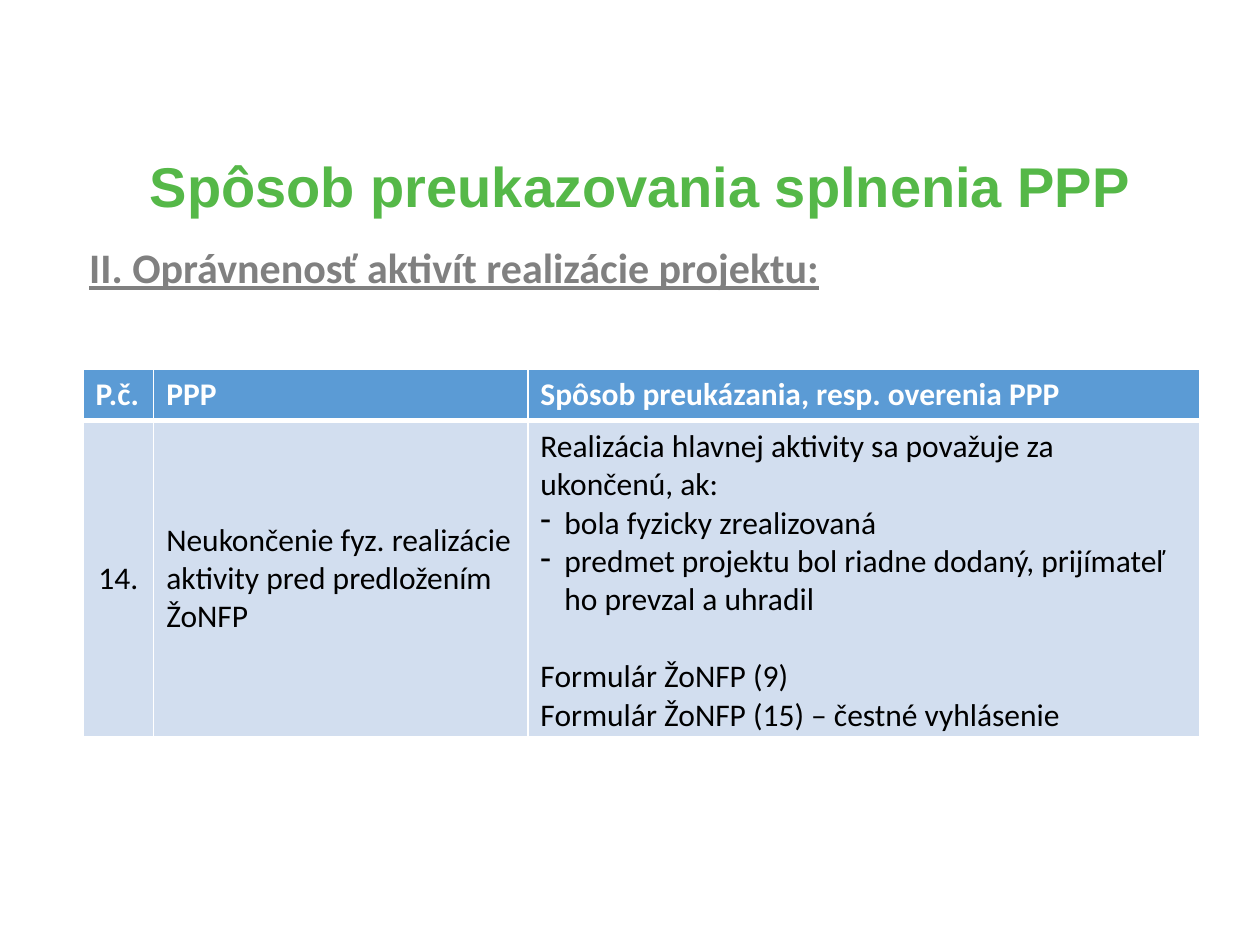
from lxml import etree
from pptx import Presentation
from pptx.dml.color import RGBColor
from pptx.enum.text import MSO_ANCHOR, MSO_AUTO_SIZE, PP_ALIGN
from pptx.oxml.ns import qn
from pptx.util import Inches, Pt

CENTER, LEFT = PP_ALIGN.CENTER, PP_ALIGN.LEFT
MIDDLE, TOP = MSO_ANCHOR.MIDDLE, MSO_ANCHOR.TOP

TITLE = "Spôsob preukazovania splnenia PPP"
SECTION = "II. Oprávnenosť aktivít realizácie projektu:"
HEADER = ["P.č.", "PPP", "Spôsob preukázania, resp. overenia PPP"]
CONDITION = [
    "14.",
    "Neukončenie fyz. realizácie aktivity pred predložením ŽoNFP",
    "Realizácia hlavnej aktivity sa považuje za ukončenú, ak:\n"
    "bola fyzicky zrealizovaná\n"
    "predmet projektu bol riadne dodaný, prijímateľ ho prevzal a uhradil\n"
    "Formulár ŽoNFP (9)\n"
    "Formulár ŽoNFP (15) – čestné vyhlásenie",
]
BULLETED = (1, 2)   # requirements listed in the last cell
FORMS_START = 3     # first form, set apart by a gap

COLUMN_WIDTHS = [0.56, 2.97, 5.33]
ROW_HEIGHTS = [0.41, 2.5]

THEME = {
    "title_font": "Arial", "body_font": "Calibri",
    "title_size": 32, "section_size": 24, "table_size": 18, "forms_gap": 22,
    "green": "55B848", "gray": "808080", "white": "FFFFFF", "black": "000000",
    "header_fill": "5B9BD5", "row_fill": "D2DEEF",
}


def format_runs(paragraph, font_name, size, color, bold=False, underline=False):
    for run in paragraph.runs:
        font = run.font
        font.name, font.size = THEME[font_name], Pt(THEME[size])
        font.color.rgb = RGBColor.from_string(THEME[color])
        font.bold, font.underline = bold, underline


def place(shape, left, top, width, height):
    shape.left, shape.top = Inches(left), Inches(top)
    shape.width, shape.height = Inches(width), Inches(height)


def add_dash(paragraph):
    """Give the paragraph a hanging dash bullet."""
    properties = paragraph._p.get_or_add_pPr()
    properties.set("marL", str(Inches(0.19)))
    properties.set("indent", str(-Inches(0.19)))
    etree.SubElement(properties, qn("a:buChar"), char="-")


def set_borders(cell, bottom_width):
    properties = cell._tc.get_or_add_tcPr()
    widths = {"a:lnL": 1, "a:lnR": 1, "a:lnT": 1, "a:lnB": bottom_width}
    for position, (side, width) in enumerate(widths.items()):
        line = etree.Element(qn(side), w=str(Pt(width)))
        fill = etree.SubElement(line, qn("a:solidFill"))
        etree.SubElement(fill, qn("a:srgbClr"), val=THEME["white"])
        properties.insert(position, line)


def fill_cell(cell, text, is_header, centered):
    cell.text_frame.text = text
    cell.vertical_anchor = TOP if is_header else MIDDLE
    cell.fill.solid()
    fill_name = "header_fill" if is_header else "row_fill"
    cell.fill.fore_color.rgb = RGBColor.from_string(THEME[fill_name])
    set_borders(cell, 3 if is_header else 1)
    for paragraph in cell.text_frame.paragraphs:
        paragraph.alignment = CENTER if centered else LEFT
        format_runs(paragraph, "body_font", "table_size",
                    "white" if is_header else "black", bold=is_header)


def add_title(slide):
    title = slide.shapes.title
    place(title, 0.61, 1.02, 8.95, 0.96)
    frame = title.text_frame
    frame.text = TITLE
    frame.vertical_anchor = MIDDLE
    paragraph = frame.paragraphs[0]
    paragraph.alignment, paragraph.line_spacing = CENTER, 0.9
    format_runs(paragraph, "title_font", "title_size", "green", bold=True)


def add_section(slide):
    section = slide.shapes.add_textbox(
        Inches(0.61), Inches(1.87), Inches(8.53), Inches(0.5))
    frame = section.text_frame
    frame.word_wrap = True
    frame.auto_size = MSO_AUTO_SIZE.SHAPE_TO_FIT_TEXT
    frame.text = SECTION
    format_runs(frame.paragraphs[0], "body_font", "section_size", "gray",
                bold=True, underline=True)


def add_conditions(slide):
    table = slide.shapes.add_table(
        len(ROW_HEIGHTS), len(COLUMN_WIDTHS), Inches(0.66), Inches(2.93),
        Inches(sum(COLUMN_WIDTHS)), Inches(sum(ROW_HEIGHTS))).table
    for column, width in zip(table.columns, COLUMN_WIDTHS):
        column.width = Inches(width)
    for row, height in zip(table.rows, ROW_HEIGHTS):
        row.height = Inches(height)
    for row_index, texts in enumerate((HEADER, CONDITION)):
        is_header = row_index == 0
        for column_index, text in enumerate(texts):
            fill_cell(table.cell(row_index, column_index), text, is_header,
                      centered=not is_header and column_index == 0)
    proofs = table.cell(1, 2).text_frame.paragraphs
    for index in BULLETED:
        add_dash(proofs[index])
    proofs[FORMS_START].space_before = Pt(THEME["forms_gap"])


def main():
    presentation = Presentation()
    presentation.slide_width, presentation.slide_height = Inches(10), Inches(7.5)
    slide = presentation.slides.add_slide(presentation.slide_layouts[5])
    add_title(slide)
    add_section(slide)
    add_conditions(slide)
    presentation.save("out.pptx")


if __name__ == "__main__":
    main()
